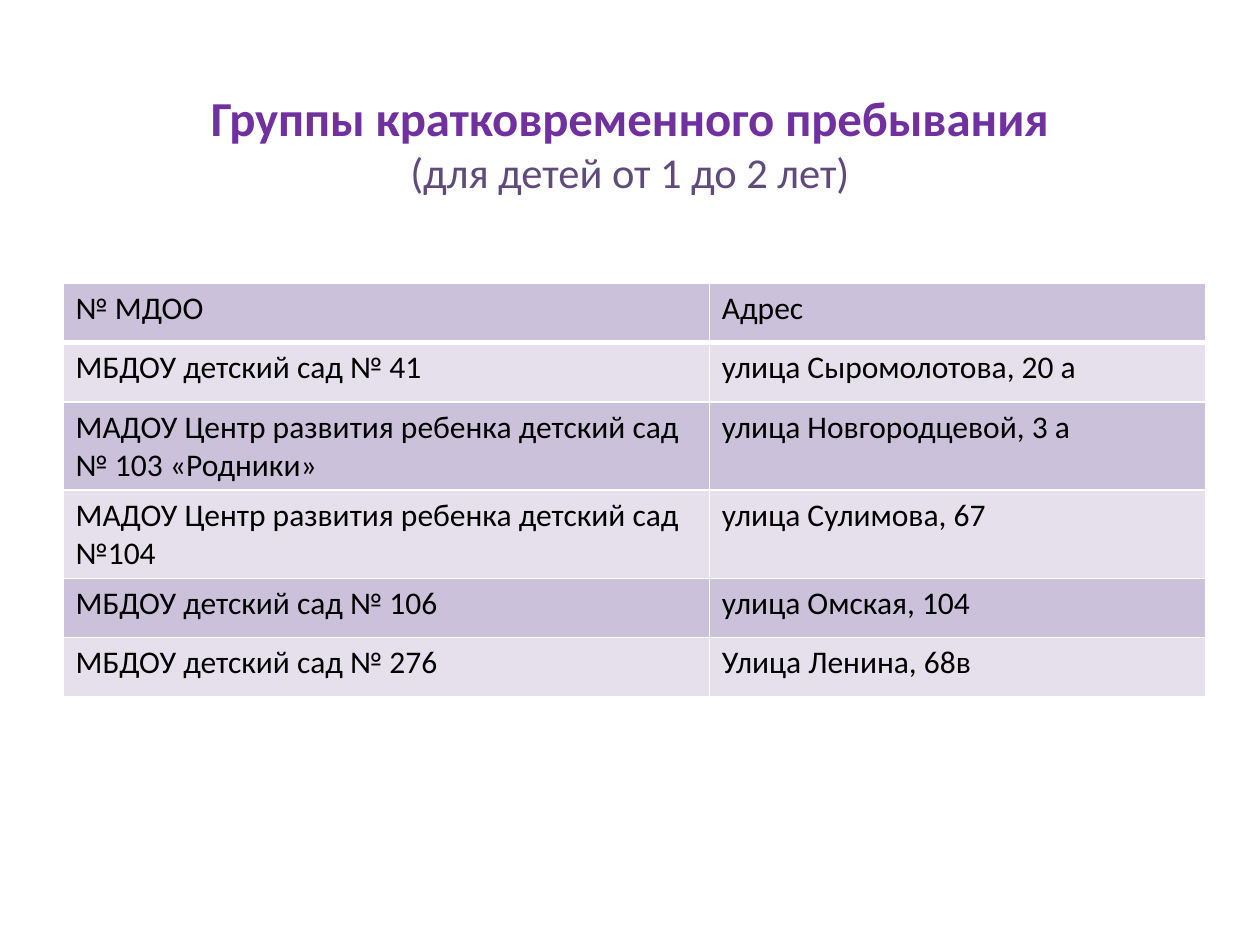
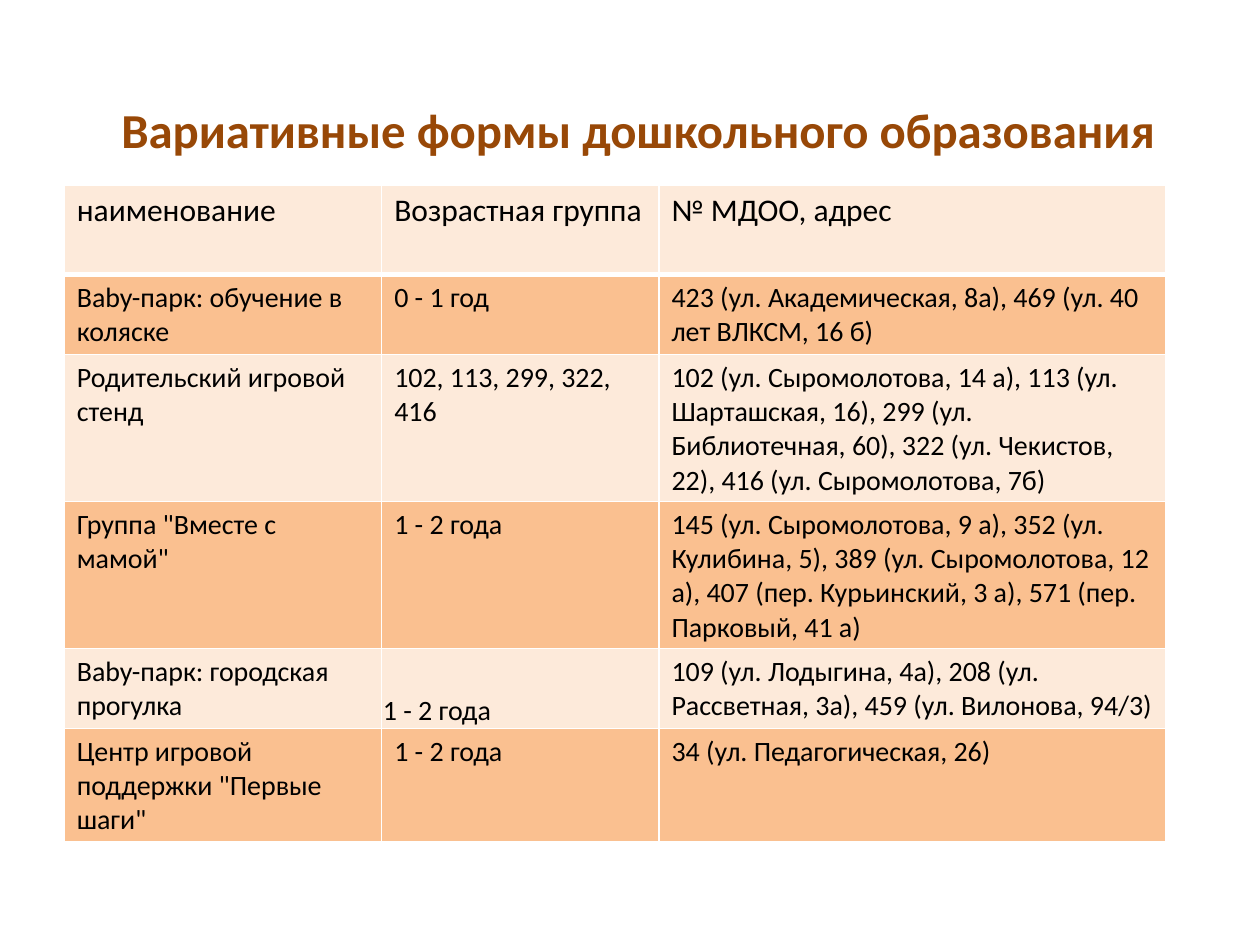
from lxml import etree
from pptx import Presentation, util as u
from pptx.dml import color
from pptx.enum import text
from pptx.oxml import ns

COLS, ROWS = 100, 75
BLACK, WHITE = "000000", "FFFFFF"
VIOLET, PLUM, BROWN = "7030A0", "604A7B", "984807"
LILACS = ("CCC1DA", "E6E0EC")
PEACHES = ("FDEADA", "FAC090")


def rgb(code):
    return color.RGBColor.from_string(code)


class Deck:
    """Holds the style and the current slide."""
    font = "Calibri"
    big, small = 27.9, 24.3

    def __init__(self):
        self.prs = Presentation()
        self.prs.slide_width = u.Inches(10)
        self.prs.slide_height = u.Inches(7.5)
        self.slide = None

    def page(self):
        self.slide = self.prs.slides.add_slide(self.prs.slide_layouts[6])

    def across(self, cols):
        return round(self.prs.slide_width * cols / COLS)

    def down(self, rows):
        return round(self.prs.slide_height * rows / ROWS)

    def run(self, para, words, size, hue=BLACK, bold=False):
        run = para.add_run()
        run.text = words
        font = run.font
        font.name, font.size, font.bold = self.font, u.Pt(size), bold
        font.color.rgb = rgb(hue)

    def title(self, x, y, w, h, runs, top=0, low=0):
        box = self.slide.shapes.add_textbox(
            self.across(x), self.down(y), self.across(w), self.down(h))
        frame = box.text_frame
        frame.word_wrap = True
        frame.vertical_anchor = text.MSO_ANCHOR.MIDDLE
        frame.margin_top, frame.margin_bottom = self.down(top), self.down(low)
        para = frame.paragraphs[0]
        para.alignment = text.PP_ALIGN.CENTER
        for i, part in enumerate(runs):
            if i:
                para.add_line_break()
            self.run(para, *part)

    def edges(self, cell, low):
        """White cell borders; the lower one may be heavier."""
        props = cell._tc.get_or_add_tcPr()
        widths = {"a:lnL": 1, "a:lnR": 1, "a:lnT": 1, "a:lnB": low}
        for i, (tag, width) in enumerate(widths.items()):
            line = etree.Element(ns.qn(tag), w=str(u.Pt(width)))
            fill = etree.SubElement(line, ns.qn("a:solidFill"))
            etree.SubElement(fill, ns.qn("a:srgbClr"), val=WHITE)
            props.insert(i, line)

    def table(self, x, y, widths, heights, rows, fills, size):
        """Banded table with an 18 pt head row."""
        grid = self.slide.shapes.add_table(
            len(rows), len(widths), self.across(x), self.down(y),
            self.across(sum(widths)), self.down(sum(heights))).table
        grid.first_row = grid.horz_banding = False
        for col, width in zip(grid.columns, widths):
            col.width = self.across(width)
        for r, (row, high) in enumerate(zip(rows, heights)):
            grid.rows[r].height = self.down(high)
            for c, words in enumerate(row):
                cell = grid.cell(r, c)
                cell.fill.solid()
                cell.fill.fore_color.rgb = rgb(fills[r % 2])
                self.edges(cell, 1 if r else 3)
                para = cell.text_frame.paragraphs[0]
                self.run(para, words, size if r else 18)
        return grid


def groups(deck):
    deck.page()
    deck.title(5, 3, 90, 12.5, [
        ("Группы кратковременного пребывания", deck.big, VIOLET, True),
        ("(для детей от 1 до 2 лет)", deck.small, PLUM)], top=4.1)
    rows = [
        ("№ МДОО", "Адрес"),
        ("МБДОУ детский сад № 41", "улица Сыромолотова, 20 а"),
        ("МАДОУ Центр развития ребенка детский сад № 103 «Родники»",
         "улица Новгородцевой, 3 а"),
        ("МАДОУ Центр развития ребенка детский сад №104",
         "улица Сулимова, 67"),
        ("МБДОУ детский сад № 106", "улица Омская, 104"),
        ("МБДОУ детский сад № 276", "Улица Ленина, 68в"),
    ]
    deck.table(5, 22.5, (51.3, 39.4), [4.7] * len(rows), rows, LILACS, 18)


def forms(deck):
    deck.page()
    deck.title(6.7, 7.6, 87.9, 7.1, [
        ("Вариативные формы дошкольного образования",
         deck.big, BROWN, True)], low=1.9)
    rows = [
        ("наименование", "Возрастная группа", "№ МДОО, адрес"),
        ("Baby-парк: обучение в коляске", "0 - 1 год",
         "423 (ул. Академическая, 8а), 469 (ул. 40 лет ВЛКСМ, 16 б)"),
        ("Родительский игровой стенд", "102, 113, 299, 322, 416",
         "102 (ул. Сыромолотова, 14 а), 113 (ул. Шарташская, 16), "
         "299 (ул. Библиотечная, 60), 322 (ул. Чекистов, 22), "
         "416 (ул. Сыромолотова, 7б)"),
        ('Группа "Вместе с мамой"', "1 - 2 года",
         "145 (ул. Сыромолотова, 9 а), 352 (ул. Кулибина, 5), "
         "389 (ул. Сыромолотова, 12 а), 407 (пер. Курьинский, 3 а), "
         "571 (пер. Парковый, 41 а)"),
        ("Baby-парк: городская прогулка", "1 - 2 года",
         "109 (ул. Лодыгина, 4а), 208 (ул. Рассветная, 3а), "
         "459 (ул. Вилонова, 94/3)"),
        ('Центр игровой поддержки "Первые шаги"', "1 - 2 года",
         "34 (ул. Педагогическая, 26)"),
    ]
    heights = [7.1] + [4.1] * (len(rows) - 1)
    grid = deck.table(5.1, 14.7, (25.2, 22, 40.2), heights, rows, PEACHES, 16)
    # The age cell of the city walk sits tight at the bottom left
    age = grid.cell(4, 1)
    age.vertical_anchor = text.MSO_ANCHOR.BOTTOM
    age.margin_left = age.margin_right = deck.across(0.1)
    age.margin_top, age.margin_bottom = deck.down(0.1), 0


def main():
    deck = Deck()
    groups(deck)
    forms(deck)
    deck.prs.save("out.pptx")


if __name__ == "__main__":
    main()
